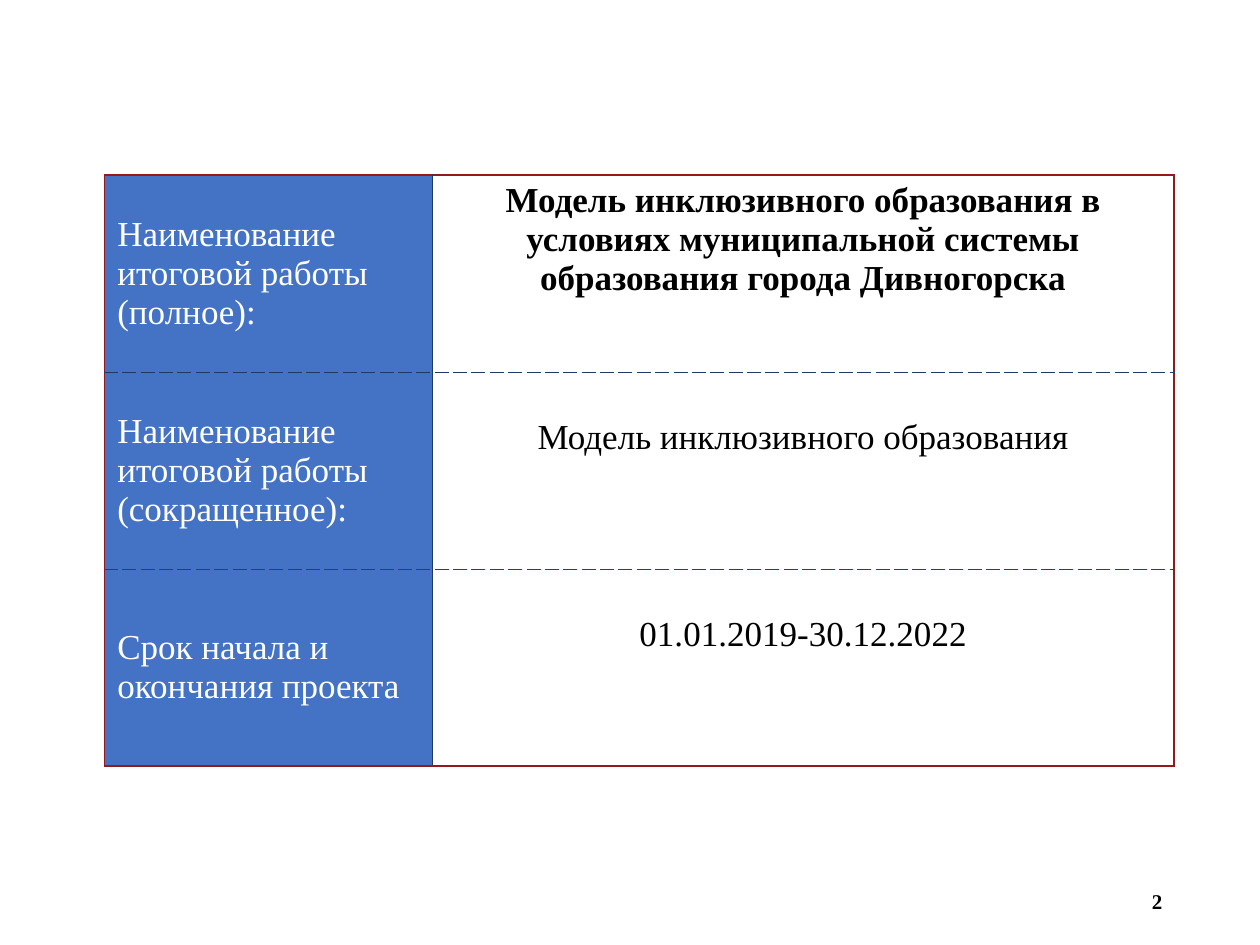
from lxml.etree import SubElement
from pptx import Presentation
from pptx.dml.color import RGBColor
from pptx.enum.text import MSO_ANCHOR, PP_ALIGN
from pptx.oxml.ns import qn
from pptx.util import Cm, Pt

FONT = "Times New Roman"
COLORS = {"label": "4472C4", "value": "FFFFFF", "frame": "921A1D",
          "inner": "203864", "light": "FFFFFF", "dark": "000000"}

# Label, value, bold value, top margin of the value in cm
ROWS = [
    ("Наименование итоговой работы (полное):",
     "Модель инклюзивного образования в условиях муниципальной системы "
     "образования города Дивногорска", True, 0.13),
    ("Наименование итоговой работы (сокращенное):",
     "Модель инклюзивного образования", False, 0.94),
    ("Срок начала и окончания проекта", "01.01.2019-30.12.2022", False, 0.94),
]
PAGE = "2"
LEFT, TOP, ROW_H = 2.11, 3.53, 3.97
COL_W = [6.6, 14.96]

# Border styles: colour, width in points, dash
FRAME = ("frame", 1, "solid")
COLUMN_LINE = ("inner", 0.5, "solid")
ROW_LINES = [FRAME, ("inner", 0.5, "sysDash"), ("frame", 0.5, "sysDash"), FRAME]
COLUMN_LINES = [FRAME, COLUMN_LINE, FRAME]


def rgb(name):
    return RGBColor.from_string(COLORS[name])


def write(tf, text, color, align, size=20, bold=False, space=0):
    p = tf.paragraphs[0]
    for key, value in {"alignment": align, "space_before": Pt(space),
                       "space_after": Pt(space)}.items():
        setattr(p, key, value)
    r = p.add_run()
    r.text = text
    for key, value in {"name": FONT, "size": Pt(size), "bold": bold}.items():
        setattr(r.font, key, value)
    r.font.color.rgb = rgb(color)


def set_borders(cell, row, col):
    tc_pr = cell._tc.get_or_add_tcPr()
    sides = {"L": COLUMN_LINES[col], "R": COLUMN_LINES[col + 1],
             "T": ROW_LINES[row], "B": ROW_LINES[row + 1]}
    for i, (side, (color, width, dash)) in enumerate(sides.items()):
        ln = SubElement(tc_pr, qn(f"a:ln{side}"), w=str(Pt(width)))
        fill = SubElement(ln, qn("a:solidFill"))
        SubElement(fill, qn("a:srgbClr"), val=COLORS[color])
        SubElement(ln, qn("a:prstDash"), val=dash)
        tc_pr.insert(i, ln)


prs = Presentation()
prs.slide_width, prs.slide_height = Cm(25.4), Cm(19.05)
s = prs.slides.add_slide(prs.slide_layouts[6])

# Project table
table = s.shapes.add_table(len(ROWS), len(COL_W), Cm(LEFT), Cm(TOP),
                           Cm(sum(COL_W)), Cm(ROW_H * len(ROWS))).table
table.first_row = table.horz_banding = False
for column, width in zip(table.columns, COL_W):
    column.width = Cm(width)
for i, (label, value, bold, margin) in enumerate(ROWS):
    table.rows[i].height = Cm(ROW_H)
    label_cell, value_cell = table.cell(i, 0), table.cell(i, 1)
    for j, (cell, fill) in enumerate([(label_cell, "label"), (value_cell, "value")]):
        cell.fill.solid()
        cell.fill.fore_color.rgb = rgb(fill)
        set_borders(cell, i, j)
    label_cell.vertical_anchor = MSO_ANCHOR.MIDDLE
    write(label_cell.text_frame, label, "light", PP_ALIGN.LEFT, space=12)
    value_cell.margin_top = Cm(margin)
    write(value_cell.text_frame, value, "dark", PP_ALIGN.CENTER, bold=bold)

# Page number
tf = s.shapes.add_textbox(Cm(17.96), Cm(17.65), Cm(5.72), Cm(1.02)).text_frame
tf.word_wrap = True
tf.vertical_anchor = MSO_ANCHOR.MIDDLE
write(tf, PAGE, "dark", PP_ALIGN.RIGHT, size=12, bold=True)

prs.save("out.pptx")
